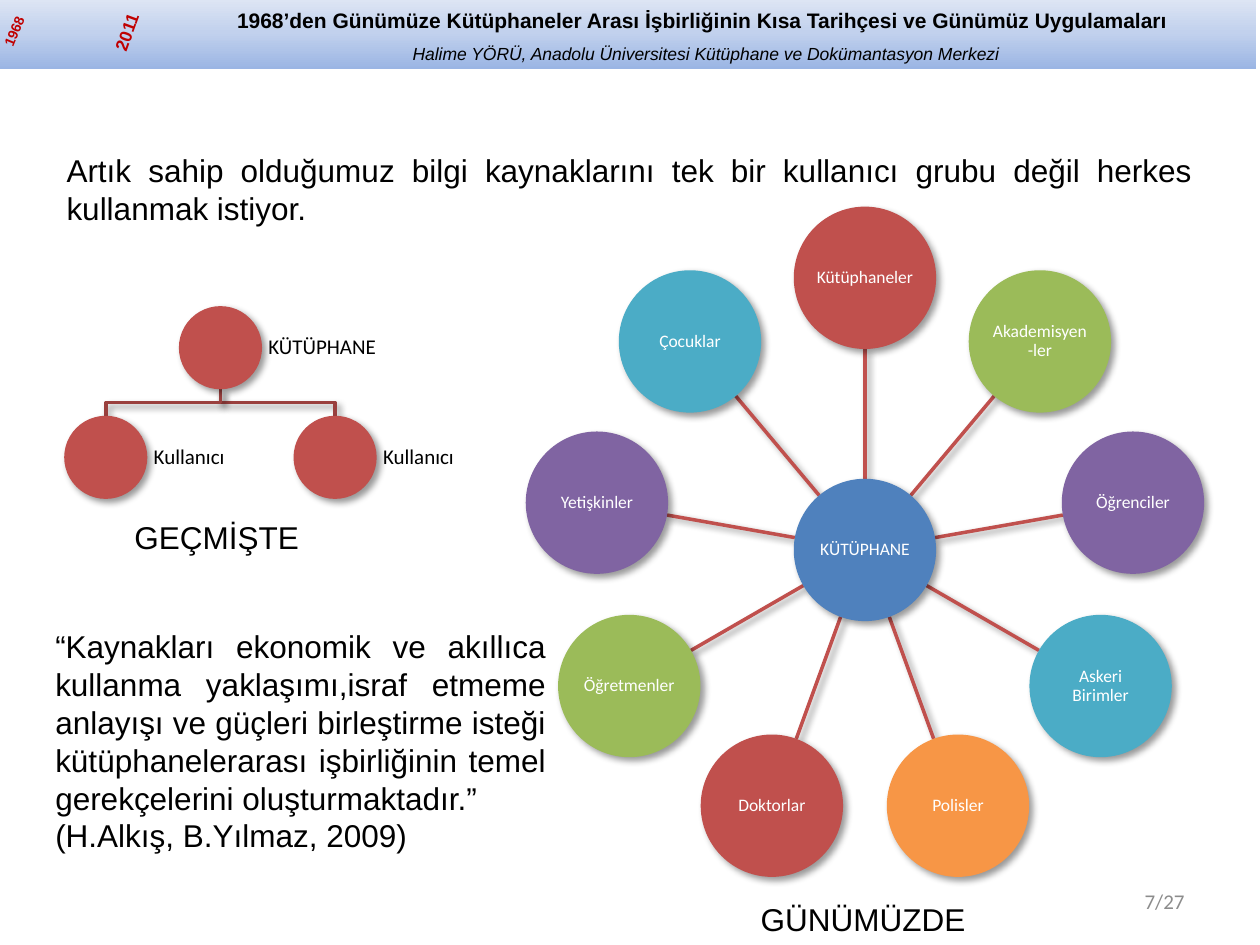
from copy import deepcopy
from math import cos, radians, sin

from pptx import Presentation
from pptx.dml.color import RGBColor
from pptx.enum.shapes import MSO_CONNECTOR as Connector, MSO_SHAPE as Shape
from pptx.enum.text import MSO_ANCHOR as Anchor, MSO_AUTO_SIZE as AutoSize, PP_ALIGN as Align
from pptx.oxml import parse_xml
from pptx.util import Inches, Pt


class Theme:
    red, dark_red, blue = "C0504D", "9A403E", "4F81BD"
    green, purple, aqua, orange = "9BBB59", "8064A2", "4BACC6", "F79646"
    band = ((0, "9AB5E4"), (0.5, "C2D1ED"), (1, "E1E8F5"))
    line_width = Pt(2)
    styles = {  # font values, then colour
        "title": ({"name": "Arial", "size": Pt(12), "bold": True}, "000000"),
        "author": ({"name": "Arial", "size": Pt(10), "italic": True}, "000000"),
        "first_year": ({"name": "Arial", "size": Pt(8), "bold": True}, "C00000"),
        "last_year": ({"name": "Arial", "size": Pt(10), "bold": True}, "C00000"),
        "body": ({"name": "Arial", "size": Pt(18)}, "000000"),
        "tree": ({"name": "Calibri", "size": Pt(12)}, "000000"),
        "hub": ({"name": "Calibri", "size": Pt(10)}, "FFFFFF"),
        "number": ({"name": "Calibri", "size": Pt(12)}, "8C8C8C"),
    }


def write(shape, lines, align=Align.CENTER, inset=None, spacing=None, **frame_format):
    """Fill a shape with (text, style) paragraphs."""
    frame = shape.text_frame
    for name, value in {"word_wrap": True, **frame_format}.items():
        setattr(frame, name, value)
    if inset is not None:
        for side in ("left", "top", "right", "bottom"):
            setattr(frame, f"margin_{side}", Inches(inset))
    for index, (text, style) in enumerate(lines):
        para = frame.paragraphs[0] if index == 0 else frame.add_paragraph()
        para.alignment, para.line_spacing = align, spacing
        span = para.add_run()
        span.text = text
        values, color = Theme.styles[style]
        for name, value in values.items():
            setattr(span.font, name, value)
        span.font.color.rgb = RGBColor.from_string(color)


def add_shadow(shape):
    """Give a shape or line the soft shadow of both diagrams."""
    shape._element.spPr.append(parse_xml(
        '<a:effectLst xmlns:a="http://schemas.openxmlformats.org/drawingml/2006/main">'
        '<a:outerShdw blurRad="50800" dist="38100" dir="2700000" algn="tl" rotWithShape="0">'
        '<a:srgbClr val="000000"><a:alpha val="40000"/></a:srgbClr>'
        '</a:outerShdw></a:effectLst>'))


deck = Presentation()
deck.slide_width, deck.slide_height = Inches(10), Inches(7.5)
page = deck.slides.add_slide(deck.slide_layouts[6])
shapes = page.shapes

# Header band with a three-stop gradient, darkest at the bottom
band = shapes.add_shape(Shape.RECTANGLE, Inches(0), Inches(-0.04), Inches(9.97), Inches(0.59))
band.shadow.inherit = False
band.line.fill.background()
band.fill.gradient()
band.fill.gradient_angle = 90
stop_list = band._element.spPr.find(".//{*}gsLst")
stop_list.insert(1, deepcopy(stop_list[0]))
for stop, (position, color) in zip(band.fill.gradient_stops, Theme.band):
    stop.position = position
    stop.color.rgb = RGBColor.from_string(color)

header = shapes.add_textbox(Inches(1.22), Inches(0.01), Inches(8.76), Inches(0.56))
write(header, [
    ("1968’den Günümüze Kütüphaneler Arası İşbirliğinin Kısa Tarihçesi ve Günümüz Uygulamaları ", "title"),
    ("Halime YÖRÜ, Anadolu Üniversitesi Kütüphane ve Dokümantasyon Merkezi", "author"),
])
header.text_frame.paragraphs[1].space_before = Pt(6)

# Slanted years
for year, style, place, angle in (
    ("1968", "first_year", (-0.11, 0.13, 0.45, 0.24), 292.1),
    ("2011", "last_year", (0.75, 0.12, 0.51, 0.27), 289.8),
):
    box = shapes.add_textbox(*map(Inches, place))
    box.rotation = angle
    write(box, [(year, style)], word_wrap=False, auto_size=AutoSize.SHAPE_TO_FIT_TEXT)

# Page number
box = shapes.add_textbox(Inches(7.17), Inches(6.95), Inches(2.33), Inches(0.4))
write(box, [("7/27", "number")], Align.RIGHT, vertical_anchor=Anchor.MIDDLE)

# Past: a library with two users, branches first
root_x, root_y, user_y = 1.75, 2.76, 3.63
node_size = 0.66
user_xs = (root_x + 0.91, root_x - 0.91)
branch_top, branch_bottom = root_y + node_size / 2, user_y - node_size / 2
branch_middle = (branch_top + branch_bottom) / 2
for user_x in user_xs:
    builder = shapes.build_freeform(Inches(root_x), Inches(branch_top))
    builder.add_line_segments(
        [(Inches(x), Inches(y)) for x, y in
         ((root_x, branch_middle), (user_x, branch_middle), (user_x, branch_bottom))],
        close=False)
    branch = builder.convert_to_shape()
    branch.fill.background()
    branch.line.color.rgb = RGBColor.from_string(Theme.dark_red)
    branch.line.width = Theme.line_width
    add_shadow(branch)

for label, x, y in (
    ("KÜTÜPHANE", root_x, root_y),
    ("Kullanıcı", user_xs[1], user_y),
    ("Kullanıcı", user_xs[0], user_y),
):
    left, top, size = Inches(x - node_size / 2), Inches(y - node_size / 2), Inches(node_size)
    node = shapes.add_shape(Shape.OVAL, left, top, size, size)
    node.fill.solid()
    node.fill.fore_color.rgb = RGBColor.from_string(Theme.red)
    node.line.fill.background()
    add_shadow(node)
    box = shapes.add_textbox(left + size, top, Inches(0.99), size)
    write(box, [(label, "tree")], Align.LEFT, 0.05, 0.9, vertical_anchor=Anchor.MIDDLE)

# Today: a hub with nine user groups, clockwise from the top
hub_x, hub_y, orbit, circle_size = 6.865, 4.365, 2.16, 1.13
circle_radius = circle_size / 2
groups = (
    ("Kütüphaneler", Theme.red), ("Akademisyen-ler", Theme.green),
    ("Öğrenciler", Theme.purple), ("Askeri Birimler", Theme.aqua),
    ("Polisler", Theme.orange), ("Doktorlar", Theme.red),
    ("Öğretmenler", Theme.green), ("Yetişkinler", Theme.purple),
    ("Çocuklar", Theme.aqua),
)
circles = [("KÜTÜPHANE", Theme.blue, hub_x, hub_y)]
for index, (label, color) in enumerate(groups):
    angle = radians(360 / len(groups) * index)
    dx, dy = sin(angle), -cos(angle)
    circles.append((label, color, hub_x + orbit * dx, hub_y + orbit * dy))
    inner, outer = circle_radius, orbit - circle_radius
    spoke = shapes.add_connector(
        Connector.STRAIGHT,
        Inches(hub_x + inner * dx), Inches(hub_y + inner * dy),
        Inches(hub_x + outer * dx), Inches(hub_y + outer * dy))
    spoke.line.color.rgb = RGBColor.from_string(Theme.red)
    spoke.line.width = Theme.line_width
    add_shadow(spoke)

for label, color, x, y in circles:
    circle = shapes.add_shape(
        Shape.OVAL, Inches(x - circle_radius), Inches(y - circle_radius),
        Inches(circle_size), Inches(circle_size))
    circle.fill.solid()
    circle.fill.fore_color.rgb = RGBColor.from_string(color)
    circle.line.fill.background()
    add_shadow(circle)
    write(circle, [(label, "hub")], inset=0.01, spacing=0.9, vertical_anchor=Anchor.MIDDLE)

# Body texts and diagram captions
for place, align, texts in (
    ((0.43, 1.15, 9.13, 0.71), Align.JUSTIFY, [
        "Artık sahip olduğumuz bilgi kaynaklarını tek bir kullanıcı grubu değil herkes kullanmak istiyor. "]),
    ((0.34, 4.93, 4.09, 1.92), Align.JUSTIFY, [
        "“Kaynakları ekonomik ve akıllıca kullanma yaklaşımı,israf etmeme anlayışı ve güçleri "
        "birleştirme isteği kütüphanelerarası işbirliğinin temel gerekçelerini oluşturmaktadır.”",
        "(H.Alkış, B.Yılmaz, 2009)"]),
    ((0.42, 4.06, 2.6, 0.4), Align.CENTER, ["GEÇMİŞTE"]),
    ((5.55, 7.09, 2.6, 0.4), Align.CENTER, ["GÜNÜMÜZDE"]),
):
    box = shapes.add_textbox(*map(Inches, place))
    write(box, [(text, "body") for text in texts], align, auto_size=AutoSize.SHAPE_TO_FIT_TEXT)

deck.save("out.pptx")
